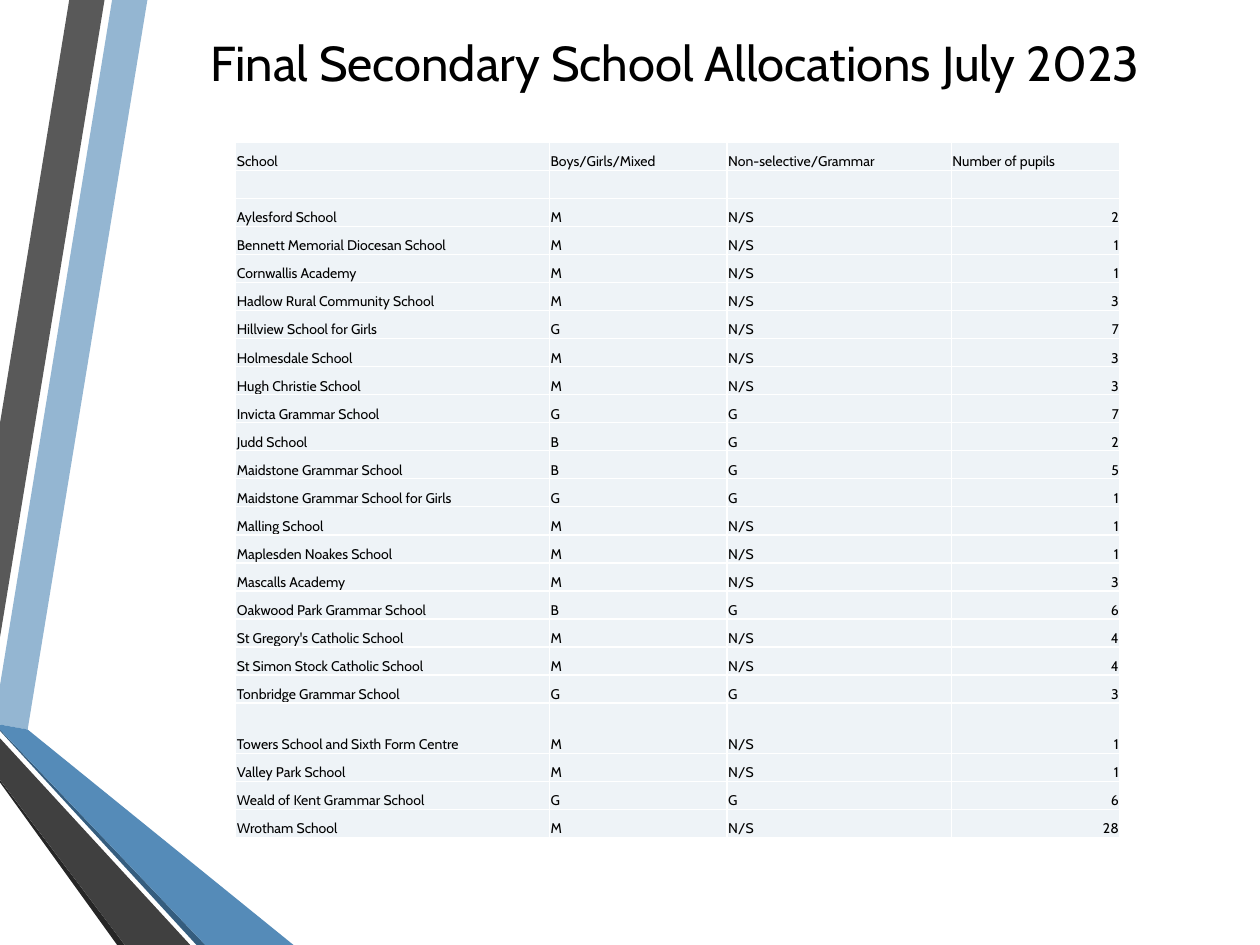
from dataclasses import dataclass

import lxml.etree
import pptx
import pptx.dml.color
import pptx.enum.text
import pptx.oxml.ns
import pptx.util
from pptx.util import Inches


@dataclass(frozen=True)
class Theme:
    font: str = "Cabin"
    text: str = "000000"
    border: str = "FFFFFF"
    cell: str = "EEF3F7"
    title_size: int = 28
    table_size: int = 8
    border_width: int = 1


THEME = Theme()

# Colour and corner points of each ribbon, from back to front
RIBBONS = [
    ("94B6D2", [(0, 5.44), (0, 5.75), (0.22, 5.79), (1.17, 0), (0.89, 0)]),
    ("595959", [(0.83, 0), (0.55, 0), (0, 3.36), (0, 5.06)]),
    ("262626", [(0, 6.19), (0, 6.21), (0.93, 7.5), (0.99, 7.5)]),
    ("355D7E", [(0, 5.79), (0, 5.8), (1.56, 7.5), (1.63, 7.5)]),
    ("558BB8", [(0, 5.79), (1.63, 7.5), (2.33, 7.5), (0.22, 5.79), (0, 5.75)]),
    ("404040", [(0, 6.19), (0.99, 7.5), (1.51, 7.5), (0, 5.86)]),
]

TITLE = "Final Secondary School Allocations July 2023"
COLUMN_WIDTHS = [2.49, 1.41, 1.78, 1.34]
TALL_SCHOOL = "Towers School and Sixth Form Centre"
TALL_ROW_HEIGHT = 0.4
ALLOCATIONS = [
    ("School", "Boys/Girls/Mixed", "Non-selective/Grammar", "Number of pupils"),
    ("", "", "", ""),
    ("Aylesford School", "M", "N/S", 2),
    ("Bennett Memorial Diocesan School", "M", "N/S", 1),
    ("Cornwallis Academy", "M", "N/S", 1),
    ("Hadlow Rural Community School", "M", "N/S", 3),
    ("Hillview School for Girls", "G", "N/S", 7),
    ("Holmesdale School", "M", "N/S", 3),
    ("Hugh Christie School", "M", "N/S", 3),
    ("Invicta Grammar School", "G", "G", 7),
    ("Judd School", "B", "G", 2),
    ("Maidstone Grammar School", "B", "G", 5),
    ("Maidstone Grammar School for Girls", "G", "G", 1),
    ("Malling School", "M", "N/S", 1),
    ("Maplesden Noakes School", "M", "N/S", 1),
    ("Mascalls Academy", "M", "N/S", 3),
    ("Oakwood Park Grammar School", "B", "G", 6),
    ("St Gregory's Catholic School", "M", "N/S", 4),
    ("St Simon Stock Catholic School", "M", "N/S", 4),
    ("Tonbridge Grammar School", "G", "G", 3),
    (TALL_SCHOOL, "M", "N/S", 1),
    ("Valley Park School", "M", "N/S", 1),
    ("Weald of Kent Grammar School", "G", "G", 6),
    ("Wrotham School", "M", "N/S", 28),
]


def color(value):
    return pptx.dml.color.RGBColor.from_string(value)


def format_runs(paragraph, size):
    for run in paragraph.runs:
        run.font.name = THEME.font
        run.font.size = pptx.util.Pt(size)
        run.font.color.rgb = color(THEME.text)


def add_ribbons(slide, left, top):
    for fill, points in RIBBONS:
        corners = [(Inches(x), Inches(y)) for x, y in points]
        builder = slide.shapes.build_freeform(*corners[0])
        builder.add_line_segments(corners[1:], close=True)
        ribbon = builder.convert_to_shape(left, top)
        ribbon.shadow.inherit = False
        ribbon.fill.solid()
        ribbon.fill.fore_color.rgb = color(fill)
        ribbon.line.fill.background()


def add_title(slide, left, top, width, height):
    text_frame = slide.shapes.add_textbox(left, top, width, height).text_frame
    text_frame.word_wrap = True
    text_frame.vertical_anchor = pptx.enum.text.MSO_ANCHOR.MIDDLE
    text_frame.text = TITLE
    paragraph = text_frame.paragraphs[0]
    paragraph.alignment = pptx.enum.text.PP_ALIGN.CENTER
    format_runs(paragraph, THEME.title_size)


def add_borders(cell):
    """Draw all four cell edges; they must come before the fill in the XML."""
    properties = cell._tc.get_or_add_tcPr()
    qn = pptx.oxml.ns.qn
    for index, edge in enumerate(("a:lnL", "a:lnR", "a:lnT", "a:lnB")):
        line = lxml.etree.Element(qn(edge), w=str(pptx.util.Pt(THEME.border_width)))
        fill = lxml.etree.SubElement(line, qn("a:solidFill"))
        lxml.etree.SubElement(fill, qn("a:srgbClr"), val=THEME.border)
        properties.insert(index, line)


def fill_cell(cell, value):
    cell.margin_left = cell.margin_right = cell.margin_top = Inches(0.01)
    cell.margin_bottom = 0
    cell.vertical_anchor = pptx.enum.text.MSO_ANCHOR.BOTTOM
    cell.fill.solid()
    cell.fill.fore_color.rgb = color(THEME.cell)
    add_borders(cell)
    paragraph = cell.text_frame.paragraphs[0]
    if value == "":
        # An empty cell keeps its row low only with a small end mark
        lxml.etree.SubElement(paragraph._p, pptx.oxml.ns.qn("a:endParaRPr"),
                              sz=str(THEME.table_size * 100))
        return
    paragraph.text = str(value)
    if isinstance(value, int):
        paragraph.alignment = pptx.enum.text.PP_ALIGN.RIGHT
    format_runs(paragraph, THEME.table_size)


def add_allocations(slide, left, top, width, height):
    table = slide.shapes.add_table(
        len(ALLOCATIONS), len(COLUMN_WIDTHS), left, top, width, height).table
    table.first_row = table.horz_banding = False
    for column, column_width in zip(table.columns, COLUMN_WIDTHS):
        column.width = Inches(column_width)
    tall_height = Inches(TALL_ROW_HEIGHT)
    row_height = (height - tall_height) // (len(ALLOCATIONS) - 1)
    for row, values in zip(table.rows, ALLOCATIONS):
        row.height = tall_height if values[0] == TALL_SCHOOL else row_height
        for cell, value in zip(row.cells, values):
            fill_cell(cell, value)


def main():
    presentation = pptx.Presentation()
    presentation.slide_width = Inches(10)
    presentation.slide_height = Inches(7.5)
    slide = presentation.slides.add_slide(presentation.slide_layouts[6])
    add_ribbons(slide, 0, 0)
    add_title(slide, Inches(1.52), Inches(0.03), Inches(7.67), Inches(0.92))
    add_allocations(slide, Inches(1.87), Inches(1.13), Inches(7.02), Inches(5.52))
    presentation.save("out.pptx")


if __name__ == "__main__":
    main()
